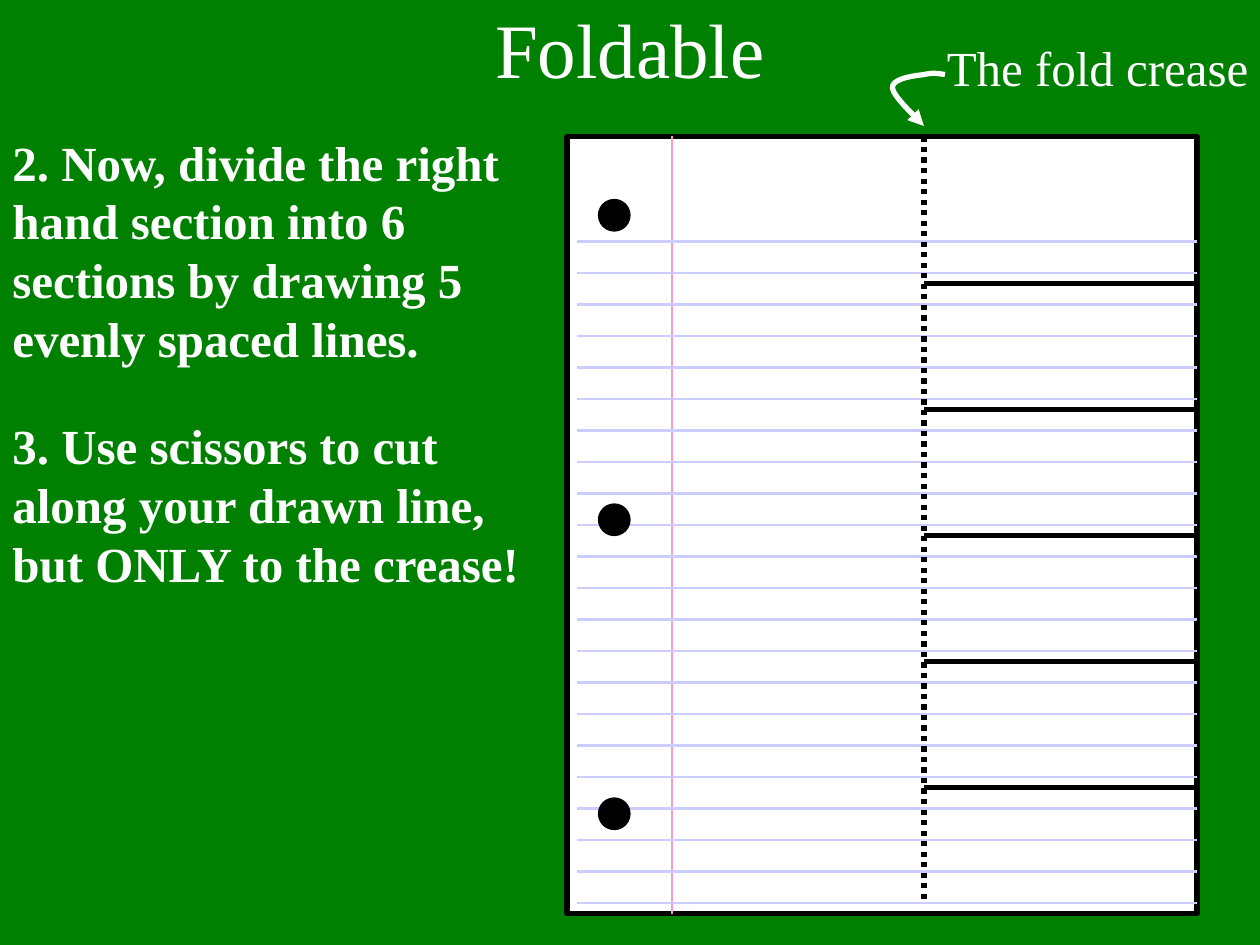
from collections import namedtuple
from dataclasses import dataclass

from lxml import etree
from pptx import Presentation
from pptx.dml.color import RGBColor
from pptx.enum.dml import MSO_LINE
from pptx.enum.shapes import MSO_CONNECTOR, MSO_SHAPE
from pptx.enum.text import MSO_ANCHOR, MSO_AUTO_SIZE, PP_ALIGN
from pptx.oxml.ns import qn
from pptx.util import Inches, Pt

STRAIGHT = MSO_CONNECTOR.STRAIGHT
RECTANGLE, OVAL = MSO_SHAPE.RECTANGLE, MSO_SHAPE.OVAL
DOTTED = MSO_LINE.ROUND_DOT
MIDDLE, TOP = MSO_ANCHOR.MIDDLE, MSO_ANCHOR.TOP
CENTER, LEFT = PP_ALIGN.CENTER, PP_ALIGN.LEFT
FIT_SHAPE, NO_FIT = MSO_AUTO_SIZE.SHAPE_TO_FIT_TEXT, MSO_AUTO_SIZE.NONE
RIGHT_SIDE = 3
CELLS_PER_INCH = 12

Box = namedtuple("Box", "left top width height")


@dataclass(frozen=True)
class Theme:
    font: str = "Times New Roman"
    title_size: int = 44
    text_size: int = 28
    leading: float = 1.2
    background: RGBColor = RGBColor(0x00, 0x80, 0x00)
    text: RGBColor = RGBColor(0xFF, 0xFF, 0xFF)
    paper: RGBColor = RGBColor(0xFF, 0xFF, 0xFF)
    ink: RGBColor = RGBColor(0x00, 0x00, 0x00)
    margin: RGBColor = RGBColor(0xFF, 0x99, 0xCC)
    rule: RGBColor = RGBColor(0xCC, 0xCC, 0xFF)
    heavy: float = 3
    light: float = 1.5
    outline: float = 0.75


THEME = Theme()


def grid(cells):
    return Inches(cells / CELLS_PER_INCH)


def place(shape, box):
    shape.left, shape.top, shape.width, shape.height = map(grid, box)


def write(shape, text, size, bold=False, alignment=LEFT, anchor=TOP, fit=FIT_SHAPE):
    frame = shape.text_frame
    frame.text = text
    frame.word_wrap = True
    frame.auto_size = fit
    frame.vertical_anchor = anchor
    paragraph = frame.paragraphs[0]
    paragraph.alignment = alignment
    paragraph.line_spacing = Pt(size * THEME.leading)
    font = paragraph.runs[0].font
    font.name, font.size, font.bold = THEME.font, Pt(size), bold
    font.color.rgb = THEME.text


def add_text(slide, box, text, bold=False):
    shape = slide.shapes.add_textbox(*map(grid, box))
    write(shape, text, THEME.text_size, bold)


def add_title(slide, box, text):
    title = slide.shapes.title
    place(title, box)
    write(title, text, THEME.title_size, alignment=CENTER, anchor=MIDDLE, fit=NO_FIT)


def add_filled(group, kind, box, fill, line_width):
    shape = group.shapes.add_shape(kind, *map(grid, box))
    shape.shadow.inherit = False
    shape.fill.solid()
    shape.fill.fore_color.rgb = fill
    shape.line.color.rgb = THEME.ink
    shape.line.width = Pt(line_width)
    return shape


def add_line(group, start, end, color, width):
    line = group.shapes.add_connector(STRAIGHT, *map(grid, (*start, *end)))
    line.line.color.rgb = color
    line.line.width = Pt(width)
    etree.SubElement(line._element.spPr, qn("a:effectLst"))
    return line


def add_paper(slide, box):
    group = slide.shapes.add_group_shape()
    right, bottom = box.left + box.width, box.top + box.height
    paper = add_filled(group, RECTANGLE, box, THEME.paper, THEME.heavy)
    margin = box.left + 10
    add_line(group, (margin, box.top), (margin, bottom), THEME.margin, THEME.light)
    for row in range(box.top + 10, bottom, 3):
        rule = add_line(group, (box.left + 1, row), (right, row), THEME.rule, THEME.light)
        if row == box.top + box.height / 2:
            rule.end_connect(paper, RIGHT_SIDE)
    for offset in (6, 35, 63):
        hole = Box(box.left + 3, box.top + offset, 3, 3)
        add_filled(group, OVAL, hole, THEME.ink, THEME.outline)


def add_sections(slide, box, count):
    group = slide.shapes.add_group_shape()
    right, bottom = box.left + box.width, box.top + box.height
    crease = add_line(group, (box.left, box.top), (box.left, bottom), THEME.ink, THEME.heavy)
    crease.line.dash_style = DOTTED
    first, pitch = box.top + 14, 12
    for index in range(count - 1):
        row = first + index * pitch
        add_line(group, (right, row), (box.left, row), THEME.ink, THEME.heavy)


def bezier(points, steps=12):
    for step in range(1, steps + 1):
        t = step / steps
        weights = ((1 - t) ** 3, 3 * t * (1 - t) ** 2, 3 * t * t * (1 - t), t ** 3)
        yield tuple(sum(w * p[axis] for w, p in zip(weights, points)) for axis in (0, 1))


def add_crease_arrow(slide, box):
    shares = [(1, 0.04), (0.88, 0.02), (0.76, 0), (0.6, 0.04), (0.42, 0.06),
              (0, 0.11), (0, 0.28), (0, 0.45), (0.5, 0.88), (0.6, 1)]
    points = [(box.left + x * box.width, box.top + y * box.height) for x, y in shares]
    curve = [point for start in (0, 3, 6) for point in bezier(points[start:start + 4])]
    builder = slide.shapes.build_freeform(*map(grid, points[0]))
    builder.add_line_segments([tuple(map(grid, point)) for point in curve], close=False)
    arrow = builder.convert_to_shape()
    arrow.shadow.inherit = False
    arrow.fill.background()
    arrow.line.color.rgb = THEME.text
    arrow.line.width = Pt(THEME.heavy)
    etree.SubElement(arrow.line._get_or_add_ln(), qn("a:tailEnd"), type="triangle")


def main():
    presentation = Presentation()
    presentation.slide_width, presentation.slide_height = grid(120), grid(90)
    slide = presentation.slides.add_slide(presentation.slide_layouts[5])
    slide.background.fill.solid()
    slide.background.fill.fore_color.rgb = THEME.background

    add_title(slide, Box(9, 0, 102, 9), "Foldable")
    add_text(slide, Box(0, 12, 50, 23.6),
             "2. Now, divide the right hand section into 6 sections "
             "by drawing 5 evenly spaced lines.", bold=True)
    add_paper(slide, Box(54, 13, 60, 74))
    add_text(slide, Box(89, 3, 32, 6.8), "The fold crease")
    add_crease_arrow(slide, Box(85, 6.9, 5, 5.1))
    add_text(slide, Box(0, 39, 52, 18),
             "3. Use scissors to cut along your drawn line, "
             "but ONLY to the crease!", bold=True)
    add_sections(slide, Box(88, 13, 26, 73), 6)
    presentation.save("out.pptx")


if __name__ == "__main__":
    main()
